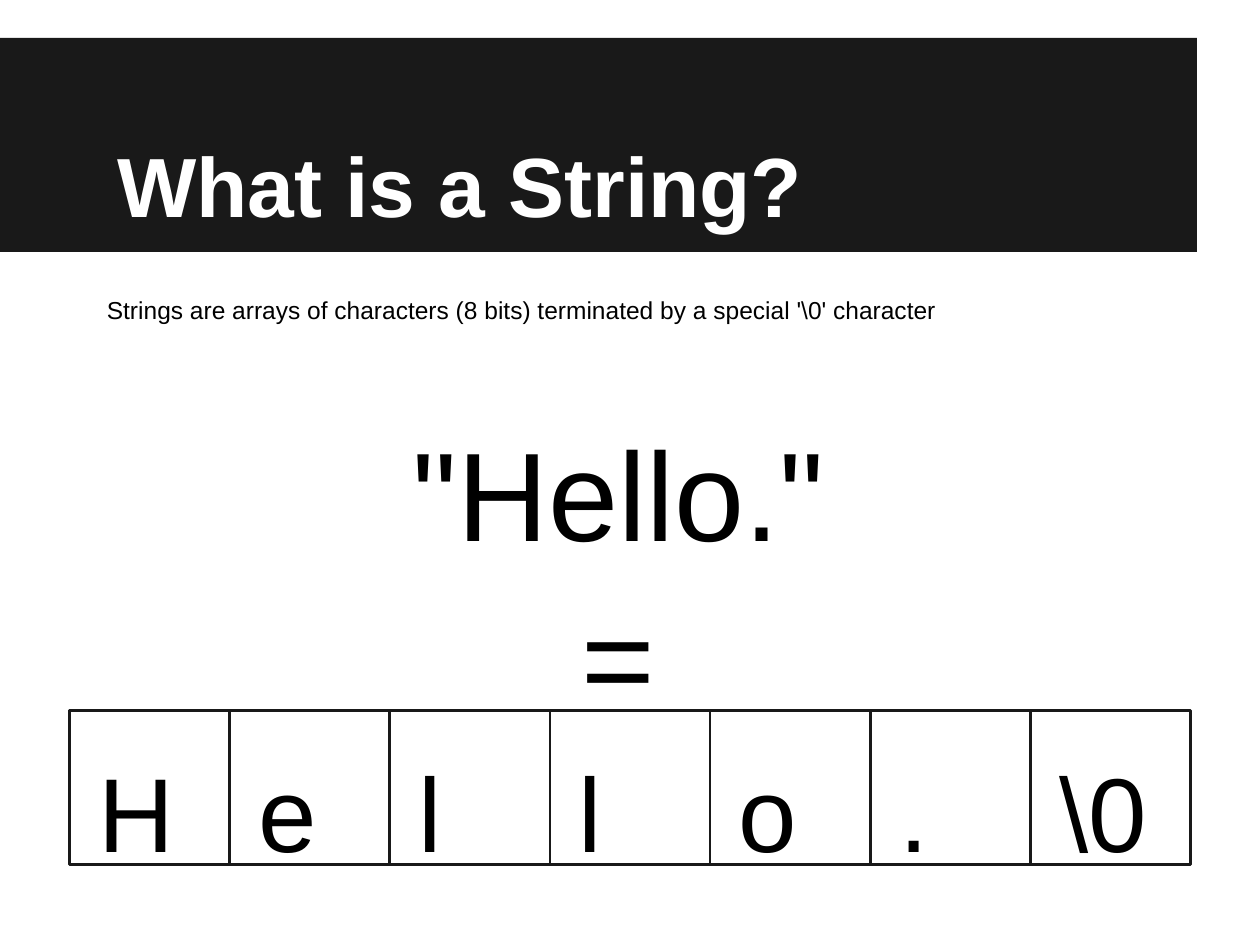
from pptx import Presentation
from pptx.dml.color import RGBColor
from pptx.enum.shapes import MSO_SHAPE
from pptx.enum.text import MSO_ANCHOR, MSO_AUTO_SIZE, PP_ALIGN
from pptx.util import Inches, Pt

RECT = MSO_SHAPE.RECTANGLE
TOP, BOTTOM = MSO_ANCHOR.TOP, MSO_ANCHOR.BOTTOM
GROW, FIXED = MSO_AUTO_SIZE.SHAPE_TO_FIT_TEXT, MSO_AUTO_SIZE.NONE
LEFT, CENTER = PP_ALIGN.LEFT, PP_ALIGN.CENTER

DARK = RGBColor(0x19, 0x19, 0x19)
BLACK = RGBColor(0x00, 0x00, 0x00)
WHITE = RGBColor(0xFF, 0xFF, 0xFF)
FONT = "Arial"
TITLE_ONLY = 5
LINE_SPACING = 1.08
CHARACTERS = ["H", "e", "l", "l", "o", ".", "\\0"]


def set_frame(tf, anchor, auto_size):
    tf.word_wrap = True
    tf.auto_size = auto_size
    tf.vertical_anchor = anchor
    tf.margin_left = tf.margin_right = Inches(0.1)
    tf.margin_top = tf.margin_bottom = Inches(0.1)


def add_run(p, text, size, color=BLACK, bold=False):
    r = p.add_run()
    r.text = text
    r.font.name = FONT
    r.font.size = Pt(size)
    r.font.bold = bold
    r.font.color.rgb = color


def add_text(shapes, box, lines, size, align=LEFT):
    """Add a text box whose lines are parted by line breaks."""
    tf = shapes.add_textbox(*box).text_frame
    set_frame(tf, TOP, GROW)
    p = tf.paragraphs[0]
    p.alignment = align
    p.line_spacing = LINE_SPACING
    for i, line in enumerate(lines):
        if i:
            p.add_line_break()
        add_run(p, line, size)


def add_title_band(slide, left, top, width, height):
    band = slide.shapes.add_shape(RECT, left, top, width, height)
    band.shadow.inherit = False
    band.fill.solid()
    band.fill.fore_color.rgb = DARK
    band.line.fill.background()

    title = slide.shapes.title
    title._element.addprevious(band._element)
    title.left, title.top = left + Inches(0.5), top
    title.width, title.height = width - Inches(0.5), height - Inches(0.04)
    tf = title.text_frame
    set_frame(tf, BOTTOM, FIXED)
    p = tf.paragraphs[0]
    p.alignment = LEFT
    pPr = p._p.get_or_add_pPr()
    pPr.set("marL", "0")
    pPr.set("indent", str(Inches(0.33)))
    add_run(p, "What is a String?", 48, WHITE, bold=True)


def add_character_array(slide, left, top, width, height):
    """Add a row of equal cells with one character in each."""
    shapes = slide.shapes.add_group_shape().shapes
    cell_width = width // len(CHARACTERS)
    for i, character in enumerate(CHARACTERS):
        x = left + i * cell_width
        cell = shapes.add_shape(RECT, x, top, cell_width, height)
        cell.shadow.inherit = False
        cell.fill.background()
        cell.line.color.rgb = DARK
        cell.line.width = Pt(1.5)
        box = (x + Inches(0.13), top + Inches(0.11), Inches(0.99), Inches(0.82))
        add_text(shapes, box, [character], 60)


def main():
    prs = Presentation()
    prs.slide_width, prs.slide_height = Inches(10), Inches(7.5)
    slide = prs.slides.add_slide(prs.slide_layouts[TITLE_ONLY])

    add_title_band(slide, Inches(0), Inches(0.3), Inches(9.5), Inches(1.7))
    add_text(slide.shapes,
             (Inches(2.56), Inches(3.1), Inches(4.7), Inches(0.55)),
             ['"Hello."', "="], 72, CENTER)
    add_character_array(slide, Inches(0.55), Inches(5.64), Inches(8.9), Inches(1.22))
    add_text(slide.shapes,
             (Inches(0.75), Inches(2.22), Inches(8.93), Inches(0.71)),
             ["Strings are arrays of characters (8 bits) terminated by "
              "a special '\\0' character"], 14)
    prs.save("out.pptx")


if __name__ == "__main__":
    main()
